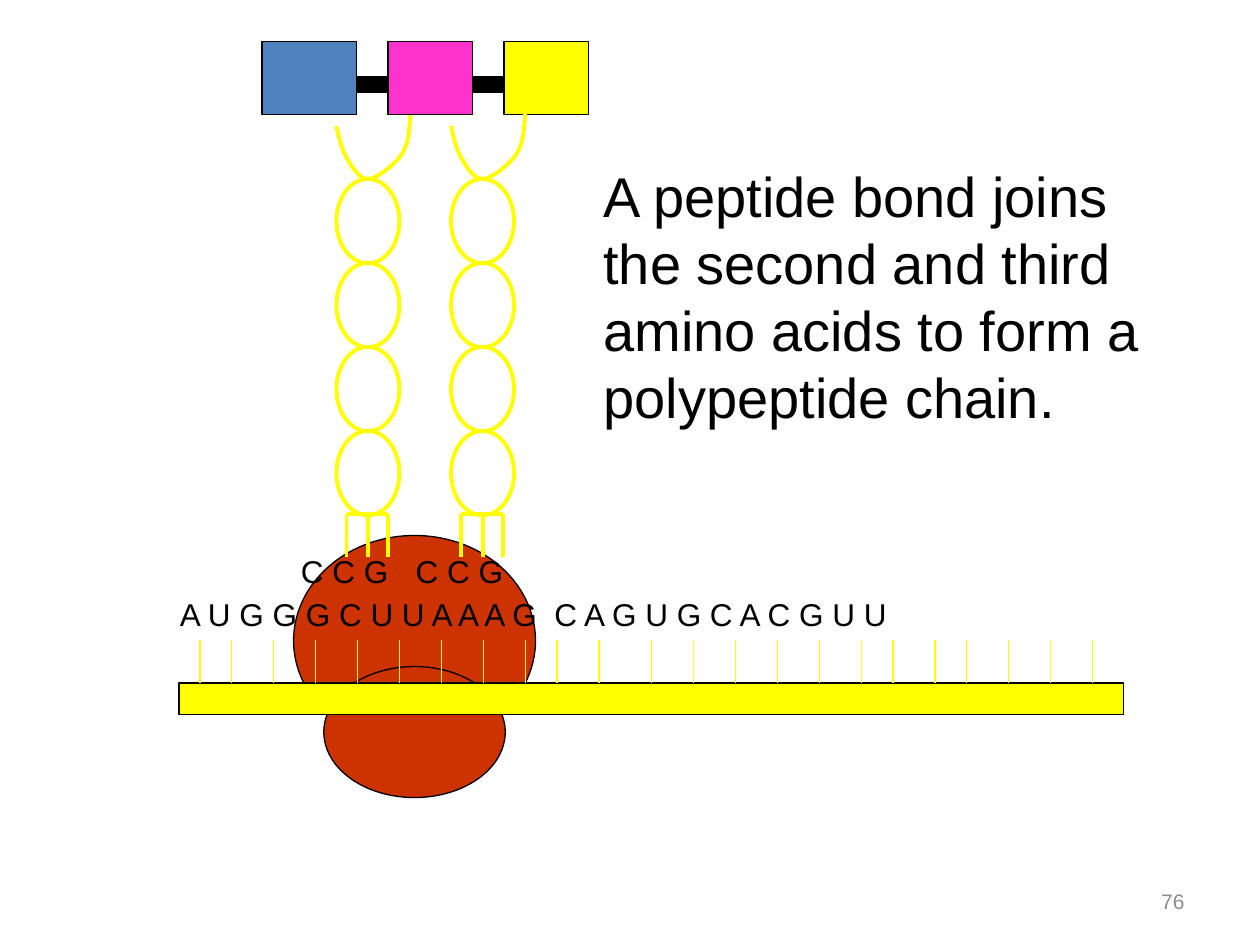
import itertools

import pptx
import pptx.dml.color
import pptx.enum.shapes
import pptx.enum.text
import pptx.oxml.ns
import pptx.util
from lxml import etree

Inches = pptx.util.Inches
SHAPE = pptx.enum.shapes.MSO_SHAPE
ALIGN = pptx.enum.text.PP_ALIGN
ANCHOR = pptx.enum.text.MSO_ANCHOR

COLORS = {
    "black": "000000",
    "yellow": "FFFF00",
    "pink": "FF33CC",
    "blue": "4F81BD",
    "ribosome": "CC3300",
    "gray": "8C8C8C",
}
# Steps between the mRNA bases, in twelfths of an inch
BASE_STEPS = [3, 4, 4, 4, 4, 4, 4, 4, 3, 4, 5, 4, 4, 4, 4, 4, 3, 4, 3, 4, 4, 4]
# Acceptor arm: start point, then cubic Bezier segments
ARM_START = (0, 0.5)
ARM_CURVES = [
    [(0.02, 0.59), (0.04, 0.68), (0.08, 0.75)],
    [(0.12, 0.82), (0.18, 0.92), (0.25, 0.92)],
    [(0.32, 0.92), (0.44, 0.82), (0.5, 0.75)],
    [(0.55, 0.68), (0.57, 0.63), (0.58, 0.5)],
    [(0.6, 0.38), (0.58, 0.08), (0.58, 0)],
]


def rgb(name):
    return pptx.dml.color.RGBColor.from_string(COLORS[name])


def style(sp, fill, line, weight):
    sp.shadow.inherit = False
    if fill:
        sp.fill.solid()
        sp.fill.fore_color.rgb = rgb(fill)
    else:
        sp.fill.background()
    sp.line.color.rgb = rgb(line)
    sp.line.width = pptx.util.Pt(weight)


def add_shape(s, kind, x, y, w, h, fill=None, line="black", weight=0.75):
    sp = s.shapes.add_shape(kind, Inches(x), Inches(y), Inches(w), Inches(h))
    style(sp, fill, line, weight)


def add_line(s, x1, y1, x2, y2, color="yellow", weight=2.25):
    cx = s.shapes.add_connector(
        pptx.enum.shapes.MSO_CONNECTOR.STRAIGHT,
        Inches(x1), Inches(y1), Inches(x2), Inches(y2))
    cx.line.color.rgb = rgb(color)
    cx.line.width = pptx.util.Pt(weight)
    etree.SubElement(cx._element.spPr, pptx.oxml.ns.qn("a:effectLst"))


def add_text(s, x, y, w, h, text, size, color="black",
             align=ALIGN.LEFT, anchor=ANCHOR.TOP):
    tf = s.shapes.add_textbox(Inches(x), Inches(y), Inches(w), Inches(h)).text_frame
    tf.word_wrap = True
    tf.vertical_anchor = anchor
    p = tf.paragraphs[0]
    p.alignment = align
    r = p.add_run()
    r.text = text
    r.font.name = "Arial"
    r.font.size = pptx.util.Pt(size)
    r.font.color.rgb = rgb(color)


def bezier(p0, p1, p2, p3, steps=12):
    for i in range(1, steps + 1):
        t = i / steps
        u = 1 - t
        yield tuple(u**3 * a + 3 * u * u * t * b + 3 * u * t * t * c + t**3 * d
                    for a, b, c, d in zip(p0, p1, p2, p3))


def add_ribosome(s, x, y):
    add_shape(s, SHAPE.OVAL, x, y, 1.92, 1.67, "ribosome")
    add_shape(s, SHAPE.OVAL, x + 0.24, y + 1.04, 1.44, 1.04, "ribosome")


def add_mrna(s, x, y, w):
    add_shape(s, SHAPE.RECTANGLE, x, y + 0.75, w, 0.25, "yellow")
    add_text(s, x - 0.09, y, w + 0.25, 0.5,
             "A U G G G C U U A A A G  C A G U G C A C G U U", 18)
    for step in itertools.accumulate(BASE_STEPS, initial=2):
        tick = x + step / 12
        add_line(s, tick, y + 0.41, tick, y + 0.75, weight=0.75)


def add_trna(s, x, y):
    # Acceptor arm
    points, start = [], ARM_START
    for curve in ARM_CURVES:
        points += bezier(start, *curve)
        start = curve[-1]
    builder = s.shapes.build_freeform(
        Inches(x + ARM_START[0]), Inches(y + ARM_START[1]))
    builder.add_line_segments(
        [(Inches(x + px), Inches(y + py)) for px, py in points], close=False)
    style(builder.convert_to_shape(), None, "yellow", 2.25)
    # Anticodon
    add_text(s, x - 0.38, y + 3.83, 1.21, 0.5, "C C G", 18)
    # Loops
    for i in range(4):
        add_shape(s, SHAPE.OVAL, x, y + 0.92 + i * 2 / 3, 0.5, 0.67,
                  line="yellow", weight=2.25)
    # Pairing prongs
    top = y + 3.58
    for dx in (0.08, 0.25, 0.41):
        add_line(s, x + dx, top, x + dx, top + 0.34)
    add_line(s, x + 0.08, top, x + 0.41, top)


def add_amino_acid(s, x, y, w, color):
    add_shape(s, SHAPE.RECTANGLE, x, y, w, 0.58, color)


def add_peptide_bond(s, x, y):
    add_line(s, x, y, x + 0.25, y, "black", 10)


def main():
    prs = pptx.Presentation()
    prs.slide_width, prs.slide_height = Inches(10), Inches(7.5)
    s = prs.slides.add_slide(prs.slide_layouts[6])

    add_ribosome(s, 2.33, 4.25)
    add_mrna(s, 1.42, 4.67, 7.5)

    # Polypeptide chain and tRNAs; the pink acid covers the first arm
    for x in (2.83, 3.75):
        add_peptide_bond(s, x, 0.67)
    add_amino_acid(s, 2.08, 0.33, 0.75, "blue")
    add_amino_acid(s, 4, 0.33, 0.67, "yellow")
    for x in (2.67, 3.58):
        add_trna(s, x, 0.5)
    add_amino_acid(s, 3.08, 0.33, 0.67, "pink")

    # Caption and slide number
    add_text(s, 4.69, 1.23, 4.92, 2.26,
             "A peptide bond joins the second and third amino acids "
             "to form a polypeptide chain.", 32)
    add_text(s, 7.17, 6.95, 2.33, 0.4, "76", 12, "gray", ALIGN.RIGHT, ANCHOR.MIDDLE)

    prs.save("out.pptx")


if __name__ == "__main__":
    main()
